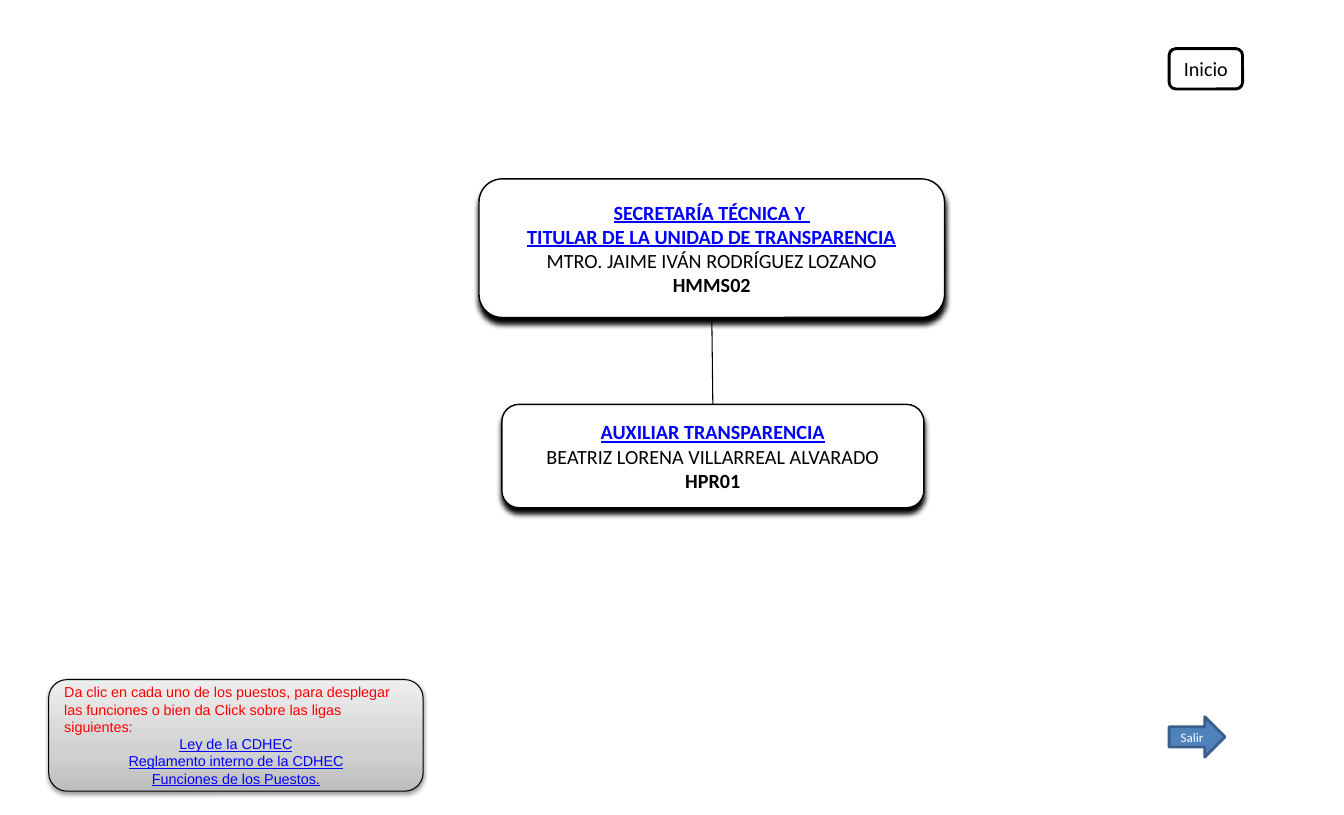
from copy import deepcopy
from dataclasses import dataclass

from lxml.etree import SubElement
from pptx import Presentation
from pptx.dml.color import RGBColor
from pptx.enum.shapes import MSO_CONNECTOR, MSO_SHAPE
from pptx.enum.text import MSO_ANCHOR, PP_ALIGN
from pptx.oxml.ns import qn
from pptx.util import Inches, Pt

COLORS = {
    "white": "FFFFFF", "black": "000000", "link": "0000FF", "red": "FF0000",
    "arrow": "4F81BD", "arrow_line": "3A5F8C",
}
NOTE_GRADIENT = [(0, "BDBDBD"), (0.35, "D1D1D1"), (1, "EEEEEE")]


@dataclass
class Line:
    text: str
    size: float = 14
    color: str = "black"
    bold: bool = False
    underline: bool = False
    font: str = "Calibri"
    align: PP_ALIGN = PP_ALIGN.CENTER


@dataclass
class Shadow:
    opacity: int
    blur: float
    distance: float


@dataclass
class Box:
    at: tuple[float, float, float, float]
    lines: list[Line]
    shape: MSO_SHAPE = MSO_SHAPE.ROUNDED_RECTANGLE
    fill: str | None = "white"  # None takes the note gradient
    line: str = "black"
    line_width: float = 1
    shadow: Shadow | None = None
    insets: tuple[float, float] = (0.1, 0.05)
    wrap: bool = True


def rgb(name: str) -> RGBColor:
    return RGBColor.from_string(COLORS[name])


def add_gradient(sp) -> None:
    sp.fill.gradient()
    sp.fill.gradient_angle = 90
    stops = sp._element.spPr.find(".//" + qn("a:gsLst"))
    stops.append(deepcopy(stops[0]))
    for stop, (position, color) in zip(sp.fill.gradient_stops, NOTE_GRADIENT):
        stop.position = position
        stop.color.rgb = RGBColor.from_string(color)


def add_shadow(sp, shadow: Shadow) -> None:
    effects = sp._element.spPr.find(qn("a:effectLst"))
    outer = SubElement(effects, qn("a:outerShdw"), blurRad=str(Pt(shadow.blur)),
                       dist=str(Pt(shadow.distance)), dir="5400000", rotWithShape="0")
    color = SubElement(outer, qn("a:srgbClr"), val=COLORS["black"])
    SubElement(color, qn("a:alpha"), val=str(shadow.opacity * 1000))


def add_box(shapes, box: Box):
    sp = shapes.add_shape(box.shape, *map(Inches, box.at))
    sp.shadow.inherit = False
    if box.fill:
        sp.fill.solid()
        sp.fill.fore_color.rgb = rgb(box.fill)
    else:
        add_gradient(sp)
    sp.line.color.rgb = rgb(box.line)
    sp.line.width = Pt(box.line_width)
    if box.shadow:
        add_shadow(sp, box.shadow)

    tf = sp.text_frame
    tf.word_wrap = box.wrap
    tf.vertical_anchor = MSO_ANCHOR.MIDDLE
    tf.margin_left = tf.margin_right = Inches(box.insets[0])
    tf.margin_top = tf.margin_bottom = Inches(box.insets[1])
    for i, line in enumerate(box.lines):
        p = tf.add_paragraph() if i else tf.paragraphs[0]
        p.alignment = line.align
        p.add_run().text = line.text
        p.font.name = line.font
        p.font.size = Pt(line.size)
        p.font.bold = line.bold
        p.font.underline = line.underline
        p.font.color.rgb = rgb(line.color)
    return sp


def post_box(at: tuple[float, float, float, float], titles: list[str],
             person: str, code: str) -> Box:
    lines = [Line(t, color="link", bold=True, underline=True) for t in titles]
    lines += [Line(person), Line(code, bold=True)]
    return Box(at, lines, shadow=Shadow(100, 4, 4), insets=(0.17, 0.09), wrap=False)


def add_link(shapes, upper, lower) -> None:
    cx = shapes.add_connector(MSO_CONNECTOR.STRAIGHT, 0, 0, 0, 0)
    cx.begin_connect(upper, 2)
    cx.end_connect(lower, 0)
    cx.line.color.rgb = rgb("black")
    cx.line.width = Pt(0.75)
    SubElement(cx._element.spPr, qn("a:effectLst"))


def main() -> None:
    prs = Presentation()
    prs.slide_width, prs.slide_height = Inches(12.99), Inches(7.88)
    s = prs.slides.add_slide(prs.slide_layouts[6])

    # Organisation chart
    secretary = add_box(s.shapes, post_box(
        (4.63, 1.73, 4.5, 1.34),
        ["SECRETARÍA TÉCNICA Y ", "TITULAR DE LA UNIDAD DE TRANSPARENCIA"],
        "MTRO. JAIME IVÁN RODRÍGUEZ LOZANO", "HMMS02"))
    assistant = add_box(s.shapes, post_box(
        (4.85, 3.91, 4.08, 1), ["AUXILIAR TRANSPARENCIA"],
        "BEATRIZ LORENA VILLARREAL ALVARADO", "HPR01"))
    add_link(s.shapes, secretary, assistant)

    # Navigation buttons
    add_box(s.shapes, Box((11.3, 0.47, 0.71, 0.39), [Line("Inicio")], line_width=2))
    add_box(s.shapes, Box((11.3, 6.93, 0.54, 0.39), [Line("Salir", 9, "white")],
                          MSO_SHAPE.RIGHT_ARROW, "arrow", "arrow_line", 2))

    # Note with the document links
    note = Line("Da clic en cada uno de los puestos, para desplegar las funciones "
                "o bien da Click sobre las ligas siguientes:",
                10, "red", font="Arial", align=PP_ALIGN.LEFT)
    documents = ["Ley de la CDHEC", "Reglamento interno de la CDHEC",
                 "Funciones de los Puestos."]
    links = [Line(d, 10, "link", underline=True, font="Arial") for d in documents]
    add_box(s.shapes, Box((0.47, 6.57, 3.62, 1.08), [note, *links], fill=None,
                          line_width=0.75, shadow=Shadow(38, 3.1, 1.6)))

    prs.save("out.pptx")


if __name__ == "__main__":
    main()
